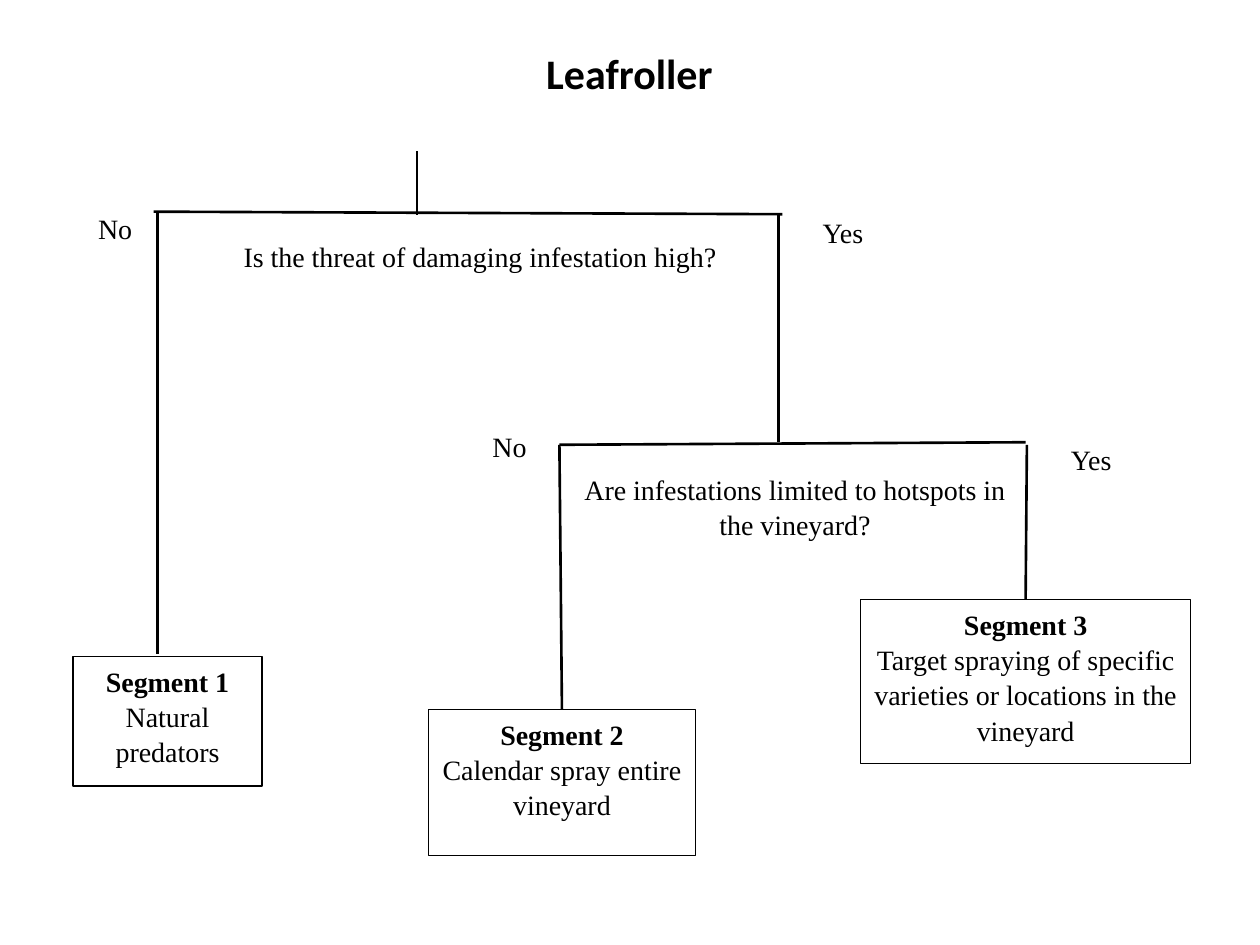
"""Builds the leafroller decision tree slide."""
from lxml.etree import SubElement
from pptx import Presentation
from pptx.dml.color import RGBColor
from pptx.enum.shapes import MSO_CONNECTOR as Link, MSO_SHAPE as Preset
from pptx.enum.text import MSO_ANCHOR as Anchor, PP_ALIGN as Align
from pptx.oxml.ns import qn
from pptx.util import Inches, Pt

BLACK = RGBColor(0, 0, 0)
WHITE = RGBColor(255, 255, 255)
COLUMNS, ROWS = 100, 75
TOP = 0


class TreeSlide:
    """Holds the style and the current slide of a decision tree."""

    heading = {"name": "Calibri", "size": Pt(24), "bold": True}
    body = {"name": "Times New Roman", "size": Pt(16), "bold": False}

    def __init__(self, deck):
        self.slide = deck.slides.add_slide(deck.slide_layouts[5])
        self.column = deck.slide_width / COLUMNS
        self.row = deck.slide_height / ROWS

    def place(self, *cells):
        """Turns alternating columns and rows into lengths."""
        return [round(cell * (self.row if i % 2 else self.column))
                for i, cell in enumerate(cells)]

    def wording(self, paragraph, text, align, style):
        paragraph.alignment = align
        run = paragraph.add_run()
        run.text = text
        for key, value in style.items():
            setattr(run.font, key, value)
        run.font.color.rgb = BLACK

    def title(self, text, area):
        heading = self.slide.shapes.title
        for side, length in zip(("left", "top", "width", "height"), self.place(*area)):
            setattr(heading, side, length)
        heading.text_frame.vertical_anchor = Anchor.MIDDLE
        self.wording(heading.text_frame.paragraphs[0], text, Align.CENTER, self.heading)

    def panel(self, area, text, align=Align.CENTER, segment=None):
        panel = self.slide.shapes.add_shape(Preset.RECTANGLE, *self.place(*area))
        panel.shadow.inherit = False
        panel.fill.solid()
        panel.fill.fore_color.rgb = WHITE
        frame = panel.text_frame
        frame.word_wrap = True
        frame.vertical_anchor = Anchor.TOP
        lines = [(text, self.body)]
        if segment:
            panel.line.color.rgb = BLACK
            panel.line.width = Pt(0.75)
            lines.insert(0, (segment, {**self.body, "bold": True}))
        else:
            panel.line.fill.background()
        for i, (line, style) in enumerate(lines):
            paragraph = frame.add_paragraph() if i else frame.paragraphs[0]
            paragraph.line_spacing = 1.05
            self.wording(paragraph, line, align, style)
        return panel

    def branch(self, ends, outcome=None):
        branch = self.slide.shapes.add_connector(Link.STRAIGHT, *self.place(*ends))
        branch.line.color.rgb = BLACK
        branch.line.width = Pt(1.5)
        if outcome:
            branch.end_connect(outcome, TOP)
        SubElement(branch._element.spPr, qn("a:effectLst"))


def main():
    deck = Presentation()
    deck.slide_width, deck.slide_height = Inches(10), Inches(7.5)
    tree = TreeSlide(deck)
    tree.title("Leafroller", (3.5, 2.2, 92.9, 7.2))

    answers = [
        ("No", (6.8, 16.2, 5, 3.9)),
        ("Yes", (64.3, 16.5, 6.6, 3.9)),
        ("No", (38.1, 33.5, 5, 3.8)),
        ("Yes", (84, 34.5, 6.5, 3.7)),
    ]
    for answer, area in answers:
        tree.panel(area, answer, Align.LEFT)

    questions = [
        ("Is the threat of damaging infestation high?", (17.5, 18.4, 41.2, 3.2)),
        ("Are infestations limited to hotspots in the vineyard?", (44.6, 36.9, 37, 6.2)),
    ]
    for question, area in questions:
        tree.panel(area, question)

    advice = [
        ("Natural predators", (5.8, 52.1, 15, 10.3)),
        ("Calendar spray entire vineyard", (34, 56.3, 21.2, 11.6)),
        ("Target spraying of specific varieties or locations in the vineyard",
         (68.3, 47.6, 26.2, 13)),
    ]
    predators, calendar, target = [
        tree.panel(area, text, segment=f"Segment {number}")
        for number, (text, area) in enumerate(advice, 1)]

    for ends in [
        (33.1, 12, 33.1, 17.1),
        (62.1, 17, 12.2, 16.8),
        (12.5, 16.8, 12.5, 51.9),
        (61.8, 17, 61.8, 35.1),
        (81.4, 35.1, 44.4, 35.3),
    ]:
        tree.branch(ends)
    tree.branch((44.4, 35.3, 44.4, 56.2), calendar)
    tree.branch((81.5, 35.3, 81.5, 47.3), target)

    deck.save("out.pptx")


if __name__ == "__main__":
    main()
